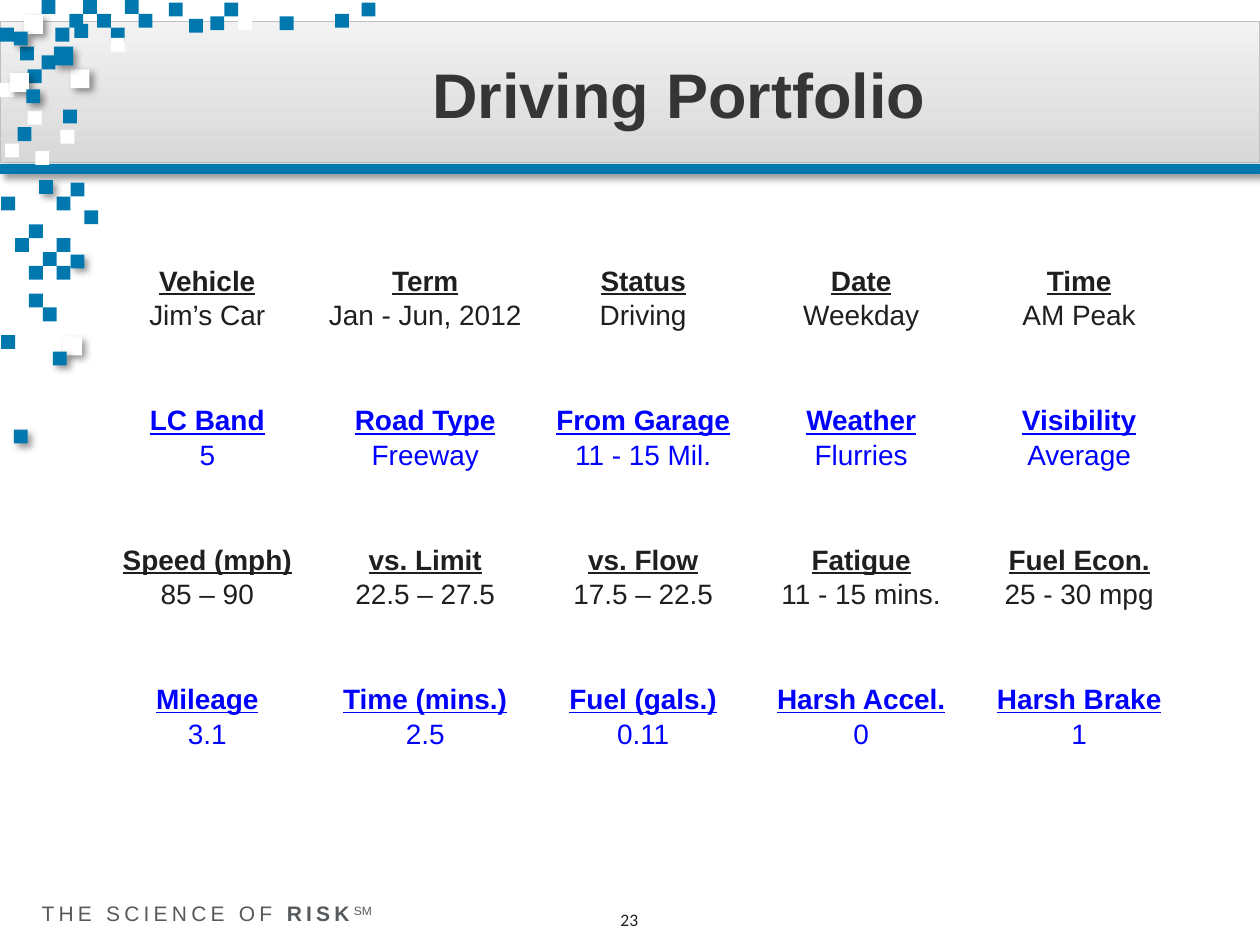
"""Builds the Driving Portfolio slide: a pixel-decorated title band over a table of labelled readings."""
from lxml import etree
from pptx import Presentation
from pptx.dml.color import RGBColor
from pptx.enum.shapes import MSO_SHAPE
from pptx.enum.text import MSO_ANCHOR, PP_ALIGN
from pptx.oxml.ns import qn
from pptx.util import Inches, Pt

RECTANGLE = MSO_SHAPE.RECTANGLE
CENTER = PP_ALIGN.CENTER
MIDDLE, BOTTOM = MSO_ANCHOR.MIDDLE, MSO_ANCHOR.BOTTOM

BLUE, WHITE, INK, LINK_BLUE = "0078AE", "FFFFFF", "1F1F1F", "0000FF"
SMALL, LARGE = 0.11, 0.15

READINGS = [
    (INK, [("Vehicle", "Jim’s Car"), ("Term", "Jan - Jun, 2012"), ("Status", "Driving"),
           ("Date", "Weekday"), ("Time", "AM Peak")]),
    (LINK_BLUE, [("LC Band", "5"), ("Road Type", "Freeway"), ("From Garage", "11 - 15 Mil."),
                 ("Weather", "Flurries"), ("Visibility", "Average")]),
    (INK, [("Speed (mph)", "85 – 90"), ("vs. Limit", "22.5 – 27.5"), ("vs. Flow", "17.5 – 22.5"),
           ("Fatigue", "11 - 15 mins."), ("Fuel Econ.", "25 - 30 mpg")]),
    (LINK_BLUE, [("Mileage", "3.1"), ("Time (mins.)", "2.5"), ("Fuel (gals.)", "0.11"),
                 ("Harsh Accel.", "0"), ("Harsh Brake", "1")]),
]
COLUMN_WIDTH, ROW_HEIGHT, ROWS_PER_BAND = 1.73, 0.26, 4

FLAT_PIXELS = [
    (BLUE, [(1.1, 0.11), (2.66, 0.11), (0.55, 0.11), (0.66, 0), (0.33, 0.44), (0.77, 0.11),
            (0.99, 0), (0.88, 0.22)]),
    (WHITE, [(0.88, 0.3)]),
    (BLUE, [(0.59, 0.19), (0.44, 0.22), (0.33, 0)]),
    (WHITE, [(0.11, 0)]),
    (BLUE, [(0, 0.22), (0.22, 0.55)]),
    (WHITE, [(0, 0.66)]),
    (BLUE, [(0.16, 0.37)]),
    (WHITE, [(0.22, 0.88)]),
    (BLUE, [(1.5, 0.15)]),
    (WHITE, [(0.48, 1.03)]),
    (BLUE, [(0.14, 1.01), (0.5, 0.87)]),
    (WHITE, [(0.04, 1.14)]),
    (BLUE, [(2.22, 0.13), (1.78, 0.02), (1.67, 0.13)]),
    (WHITE, [(1.89, 0.13)]),
    (BLUE, [(2.87, 0.02), (1.34, 0.02)]),
    (WHITE, [(0.28, 1.2)]),
    (BLUE, [(0.12, 1.89), (0.45, 1.56), (0.23, 2.11), (0.23, 1.78), (0.01, 1.56), (0.34, 2),
            (0.67, 1.67), (0.45, 2.11), (0.45, 1.89), (0.56, 1.45)]),
    (WHITE, [(0.78, 1.56)]),
    (BLUE, [(0.01, 2.66), (0.23, 2.33), (0.34, 2.44)]),
]
RAISED_PIXELS = [
    (0.56, 2.02, SMALL, BLUE), (0.56, 0.55, LARGE, WHITE), (0.19, 0.12, LARGE, WHITE),
    (0.11, 0.25, SMALL, BLUE), (0.5, 2.67, LARGE, WHITE), (0.42, 2.79, SMALL, BLUE),
    (0.11, 3.41, SMALL, BLUE), (0.43, 0.37, LARGE, BLUE), (0.08, 0.58, LARGE, WHITE),
    (0.21, 0.71, SMALL, BLUE), (0.31, 1.43, SMALL, BLUE),
]


def rgb(value):
    return RGBColor.from_string(value)


def add_block(slide, left, top, width, height, color, raised=False):
    block = slide.shapes.add_shape(RECTANGLE, Inches(left), Inches(top), Inches(width), Inches(height))
    block.shadow.inherit = False
    block.fill.solid()
    block.fill.fore_color.rgb = rgb(color)
    block.line.fill.background()
    if raised:
        effects = block.element.spPr.find(qn("a:effectLst"))
        shadow = etree.SubElement(effects, qn("a:outerShdw"), blurRad=str(Pt(4)), dist=str(Pt(3)),
                                  dir="2700000", algn="tl", rotWithShape="0")
        tone = etree.SubElement(shadow, qn("a:srgbClr"), val="000000")
        etree.SubElement(tone, qn("a:alpha"), val="40000")
    return block


def add_run(paragraph, text, size, color, font="Arial", bold=False, underline=False):
    run = paragraph.add_run()
    run.text = text
    run.font.name = font
    run.font.size = Pt(size)
    run.font.bold = bold
    run.font.underline = underline
    run.font.color.rgb = rgb(color)
    return run


def add_text_frame(slide, left, top, width, height):
    frame = slide.shapes.add_textbox(Inches(left), Inches(top), Inches(width), Inches(height)).text_frame
    frame.word_wrap = True
    return frame


def add_footer(slide):
    number = add_text_frame(slide, 3.83, 7.1, 2.33, 0.4)
    number.vertical_anchor = MIDDLE
    number.paragraphs[0].alignment = CENTER
    add_run(number.paragraphs[0], "23", 10, INK, font="Calibri")

    slogan = add_text_frame(slide, 0.33, 6.75, 3.75, 0.49)
    slogan.margin_left = slogan.margin_right = slogan.margin_top = slogan.margin_bottom = 0
    words = slogan.paragraphs[0]
    words.line_spacing = Pt(43)
    for text, bold, attribute, value in [("THE SCIENCE OF ", False, "spc", "240"),
                                         ("RISK", True, "spc", "240"),
                                         ("SM", False, "baseline", "30000")]:
        run = add_run(words, text, 12, "575A5D", bold=bold)
        run.font._element.set(attribute, value)


def add_header(slide):
    band = add_block(slide, 0, 0.17, 10, 1.12, WHITE)
    band.fill.gradient()
    band.fill.gradient_angle = 90
    for stop, color in zip(band.fill.gradient_stops, ("D8D8D8", "F2F2F2")):
        stop.color.rgb = rgb(color)
    band.line.color.rgb = rgb("BFBFBF")
    band.line.width = Pt(0.5)
    add_block(slide, 0, 1.3, 10, 0.08, BLUE, raised=True)

    for color, spots in FLAT_PIXELS:
        for left, top in spots:
            add_block(slide, left, top, SMALL, SMALL, color)
    for left, top, size, color in RAISED_PIXELS:
        add_block(slide, left, top, size, size, color, raised=True)

    title = add_text_frame(slide, 0.77, 0.17, 9.24, 1.22)
    title.vertical_anchor = MIDDLE
    title.paragraphs[0].alignment = CENTER
    title.paragraphs[0].line_spacing = 0.9
    add_run(title.paragraphs[0], "Driving Portfolio", 36, "353535", bold=True)


def add_readings(slide):
    columns = len(READINGS[0][1])
    rows = ROWS_PER_BAND * (len(READINGS) - 1) + 2
    table = slide.shapes.add_table(rows, columns, Inches(0.78), Inches(2.08),
                                   Inches(COLUMN_WIDTH * columns), Inches(ROW_HEIGHT * rows)).table
    table.first_row = table.horz_banding = False
    for column in table.columns:
        column.width = Inches(COLUMN_WIDTH)
    for row in table.rows:
        row.height = Inches(ROW_HEIGHT)
    for cell in table.iter_cells():
        cell.fill.background()
        cell.vertical_anchor = BOTTOM
        cell.margin_left = cell.margin_right = cell.margin_top = Inches(0.01)
        cell.margin_bottom = 0
        paragraph = cell.text_frame.paragraphs[0]
        paragraph.alignment = CENTER
        etree.SubElement(paragraph._p, qn("a:endParaRPr"), sz="1600")
    for band, (color, pairs) in enumerate(READINGS):
        for column, pair in enumerate(pairs):
            for offset, text in enumerate(pair):
                cell = table.cell(band * ROWS_PER_BAND + offset, column)
                heading = offset == 0
                add_run(cell.text_frame.paragraphs[0], text, 16, color, bold=heading, underline=heading)


def main():
    deck = Presentation()
    deck.slide_width, deck.slide_height = Inches(10), Inches(7.5)
    slide = deck.slides.add_slide(deck.slide_layouts[6])
    add_footer(slide)
    add_header(slide)
    add_readings(slide)
    deck.save("out.pptx")


if __name__ == "__main__":
    main()
